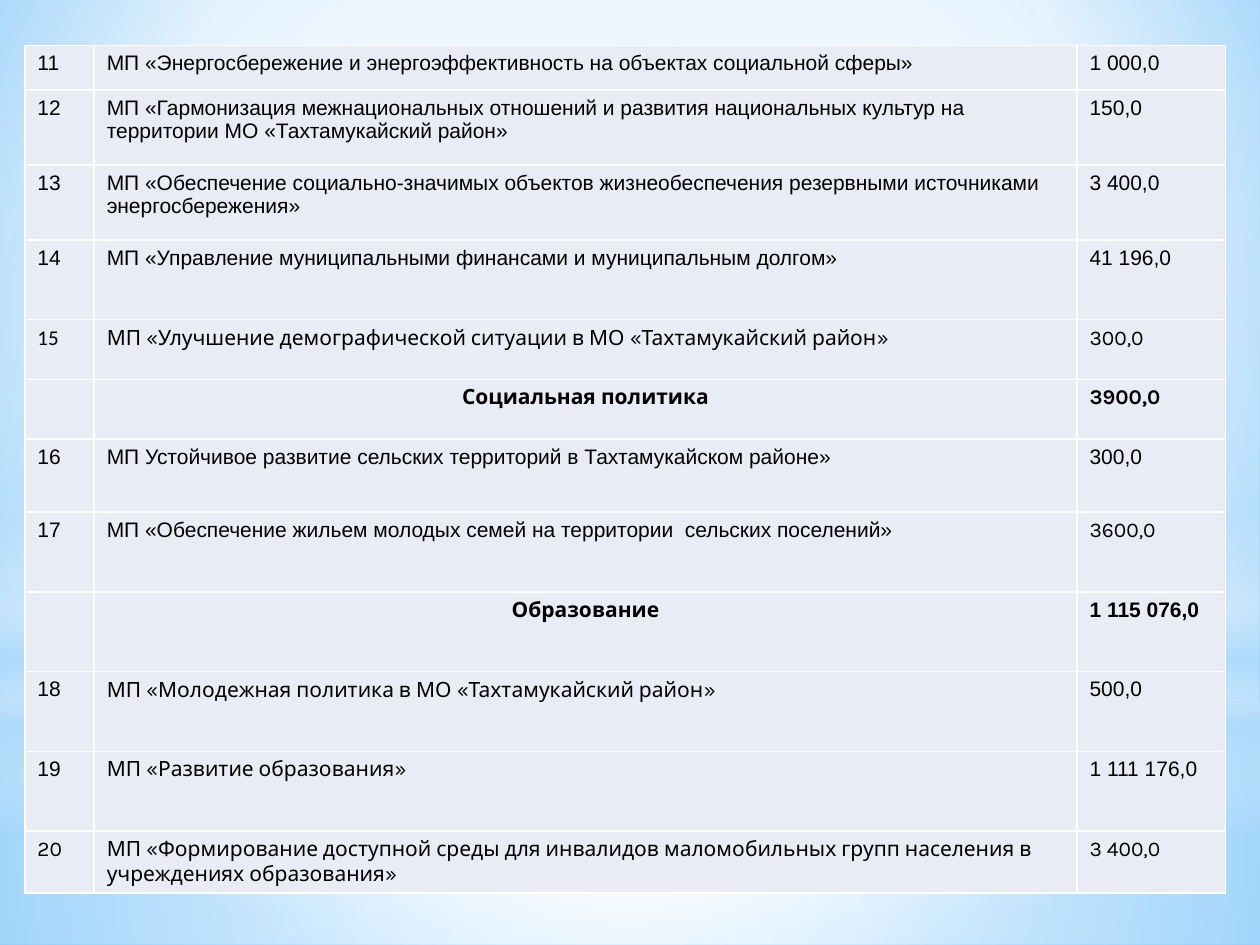
"""Build a slide listing municipal programmes 11-20 with their funding."""
from dataclasses import dataclass

from pptx import Presentation
from pptx.dml.color import RGBColor
from pptx.enum.shapes import MSO_SHAPE
from pptx.enum.text import PP_ALIGN
from pptx.oxml import parse_xml
from pptx.oxml.ns import nsdecls, qn
from pptx.util import Pt

RECTANGLE, OVAL = MSO_SHAPE.RECTANGLE, MSO_SHAPE.OVAL
LEFT, CENTER = PP_ALIGN.LEFT, PP_ALIGN.CENTER
ARIAL, CALIBRI, KARLA = "Arial", "Calibri", "Karla"
WHITE, SKY, CELL_FILL, BLACK = "FFFFFF", "B4DCFA", "E9EBF5", "000000"
MIDDLE = (50, 50, 50, 50)
COLUMN_WIDTHS = (39.6, 561.6, 85)


@dataclass(frozen=True)
class Stop:
    position: int
    color: str
    alpha: int = 100


@dataclass(frozen=True)
class Glow:
    preset: MSO_SHAPE
    top: float
    height: float
    stops: tuple[Stop, ...]
    focus: tuple[int, ...] | None = MIDDLE


@dataclass(frozen=True)
class Program:
    number: str
    title: str
    amount: str
    height: float
    fonts: tuple[str, str, str] = (ARIAL, ARIAL, ARIAL)
    heading: bool = False


GLOWS = (
    Glow(RECTANGLE, 401.8, 138.2, (Stop(0, WHITE, 91), Stop(37, WHITE, 76), Stop(100, SKY, 79))),
    Glow(RECTANGLE, 0, 401.8, (Stop(0, WHITE, 89), Stop(48, WHITE, 62), Stop(100, SKY, 79))),
    Glow(RECTANGLE, 296.6, 180,
         (Stop(0, WHITE, 0), Stop(29, WHITE, 30), Stop(45, SKY, 40),
          Stop(55, WHITE, 26), Stop(65, SKY, 60), Stop(100, WHITE, 0)), None),
    Glow(OVAL, 126, 401.8, (Stop(0, WHITE), Stop(56, WHITE, 0))),
)
BACKDROP = (Stop(0, "9ED5FF"), Stop(60, WHITE), Stop(100, "5BB9FF"))

PROGRAMS = (
    Program("11", "МП «Энергосбережение и энергоэффективность на объектах социальной сферы»",
            "1 000,0", 25.4),
    Program("12", "МП «Гармонизация межнациональных отношений и развития национальных "
            "культур на территории МО «Тахтамукайский район»", "150,0", 42.9),
    Program("13", "МП «Обеспечение социально-значимых объектов жизнеобеспечения резервными "
            "источниками энергосбережения»", "3 400,0", 42.9),
    Program("14", "МП «Управление муниципальными финансами и муниципальным долгом»",
            "41 196,0", 45.6),
    Program("15", "МП «Улучшение демографической ситуации в МО «Тахтамукайский район»",
            "300,0", 34.1, (CALIBRI, KARLA, KARLA)),
    Program("", "Социальная политика", "3900,0", 34.1, (KARLA, KARLA, KARLA), True),
    Program("16", "МП Устойчивое развитие сельских территорий в Тахтамукайском районе»",
            "300,0", 41.8),
    Program("17", "МП «Обеспечение жильем молодых семей на территории  сельских поселений»",
            "3600,0", 45.6, (ARIAL, ARIAL, KARLA)),
    Program("", "Образование", "1 115 076,0", 45.6, (KARLA, KARLA, ARIAL), True),
    Program("18", "МП «Молодежная политика в МО «Тахтамукайский район»",
            "500,0", 45.6, (ARIAL, KARLA, ARIAL)),
    Program("19", "МП «Развитие образования»", "1 111 176,0", 45.6, (ARIAL, KARLA, ARIAL)),
    Program("20", "МП «Формирование доступной среды для инвалидов маломобильных групп "
            "населения в учреждениях образования»", "3 400,0", 26.6, (KARLA, KARLA, KARLA)),
)


def rgb(color: str) -> RGBColor:
    return RGBColor.from_string(color)


def set_gradient(fill, owner, stops: tuple[Stop, ...], focus: tuple[int, ...] | None) -> None:
    fill.gradient()
    stop_xml = "".join(
        f'<a:gs pos="{stop.position * 1000}"><a:srgbClr val="{stop.color}">'
        f'<a:alpha val="{stop.alpha * 1000}"/></a:srgbClr></a:gs>' for stop in stops)
    if focus:
        sides = " ".join(f'{side}="{inset * 1000}"' for side, inset in zip("ltrb", focus))
        direction = f'<a:path path="circle"><a:fillToRect {sides}/></a:path>'
    else:
        direction = '<a:lin ang="5400000" scaled="0"/>'
    default = next(owner.iter(qn("a:gradFill")))
    default.getparent().replace(default, parse_xml(
        f'<a:gradFill {nsdecls("a")} rotWithShape="1"><a:gsLst>{stop_xml}</a:gsLst>'
        f'{direction}</a:gradFill>'))


def add_glow(slide, glow: Glow) -> None:
    shape = slide.shapes.add_shape(glow.preset, 0, Pt(glow.top), Pt(720), Pt(glow.height))
    shape.shadow.inherit = False
    shape.line.fill.background()
    set_gradient(shape.fill, shape.element, glow.stops, glow.focus)


def set_borders(cell) -> None:
    properties = cell._tc.get_or_add_tcPr()
    for order, side in enumerate("LRTB"):
        properties.insert(order, parse_xml(
            f'<a:ln{side} {nsdecls("a")} w="12700"><a:solidFill>'
            f'<a:srgbClr val="{WHITE}"/></a:solidFill></a:ln{side}>'))


def fill_cell(cell, text: str, font_name: str, bold: bool, alignment: PP_ALIGN) -> None:
    cell.fill.solid()
    cell.fill.fore_color.rgb = rgb(CELL_FILL)
    set_borders(cell)
    if not text:
        return
    paragraph = cell.text_frame.paragraphs[0]
    paragraph.alignment = alignment
    run = paragraph.add_run()
    run.text = text
    run.font.name = font_name
    run.font.size = Pt(12)
    run.font.bold = bold
    run.font.color.rgb = rgb(BLACK)


def add_programs(slide, programs: tuple[Program, ...]) -> None:
    table = slide.shapes.add_table(
        len(programs), len(COLUMN_WIDTHS), Pt(14.2), Pt(25.9),
        Pt(sum(COLUMN_WIDTHS)), Pt(sum(program.height for program in programs))).table
    table.first_row = False
    table.horz_banding = False
    for column, width in zip(table.columns, COLUMN_WIDTHS):
        column.width = Pt(width)
    for row, program in zip(table.rows, programs):
        row.height = Pt(program.height)
        texts = (program.number, program.title, program.amount)
        alignments = (LEFT, CENTER if program.heading else LEFT, LEFT)
        for cell, text, font_name, alignment in zip(row.cells, texts, program.fonts, alignments):
            fill_cell(cell, text, font_name, program.heading, alignment)


def main() -> None:
    deck = Presentation()
    deck.slide_width, deck.slide_height = Pt(720), Pt(540)
    slide = deck.slides.add_slide(deck.slide_layouts[6])
    set_gradient(slide.background.fill, slide.element, BACKDROP, (20, 10, 20, 60))
    for glow in GLOWS:
        add_glow(slide, glow)
    add_programs(slide, PROGRAMS)
    deck.save("out.pptx")


if __name__ == "__main__":
    main()
